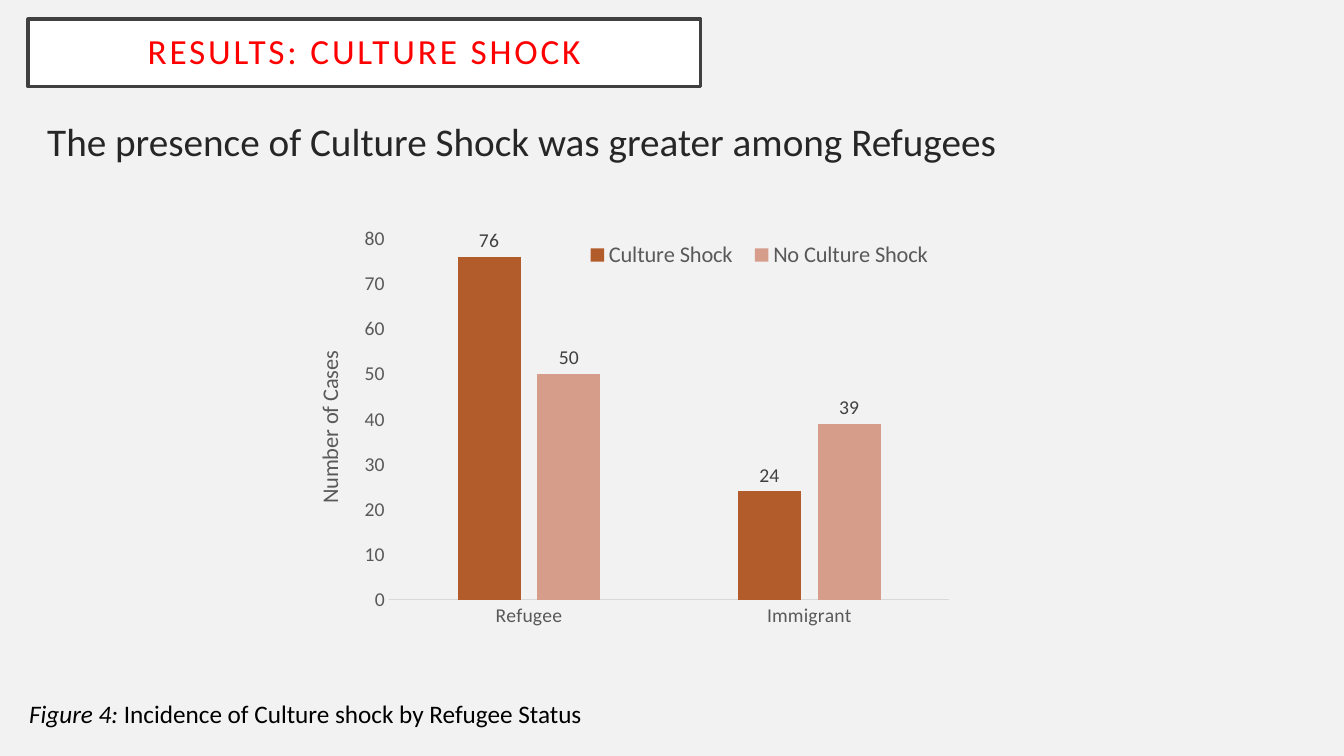
from dataclasses import dataclass

from lxml import etree
from pptx import Presentation
from pptx.chart.data import CategoryChartData
from pptx.dml.color import RGBColor
from pptx.enum.chart import XL_CHART_TYPE, XL_LABEL_POSITION, XL_LEGEND_POSITION, XL_TICK_MARK
from pptx.enum.shapes import MSO_SHAPE
from pptx.enum.text import MSO_ANCHOR, MSO_AUTO_SIZE, PP_ALIGN
from pptx.oxml.ns import qn
from pptx.util import Inches, Pt

COLUMN_CLUSTERED = XL_CHART_TYPE.COLUMN_CLUSTERED
OUTSIDE_END = XL_LABEL_POSITION.OUTSIDE_END
LEGEND_BOTTOM = XL_LEGEND_POSITION.BOTTOM
NO_TICK = XL_TICK_MARK.NONE
RECTANGLE = MSO_SHAPE.RECTANGLE
MIDDLE = MSO_ANCHOR.MIDDLE
GROW_TO_FIT = MSO_AUTO_SIZE.SHAPE_TO_FIT_TEXT
CENTER = PP_ALIGN.CENTER

FONT = "Calibri"
BACKGROUND = RGBColor(0xF2, 0xF2, 0xF2)
WHITE = RGBColor(0xFF, 0xFF, 0xFF)
BLACK = RGBColor(0x00, 0x00, 0x00)
RED = RGBColor(0xFF, 0x00, 0x00)
INK = RGBColor(0x26, 0x26, 0x26)
DARK_GRAY = RGBColor(0x40, 0x40, 0x40)
GRAY = RGBColor(0x59, 0x59, 0x59)
LIGHT_GRAY = RGBColor(0xD9, 0xD9, 0xD9)
RUST = RGBColor(0xB2, 0x5B, 0x2B)
ROSE = RGBColor(0xD7, 0x9D, 0x8B)


@dataclass(frozen=True)
class Box:
    left: float
    top: float
    width: float
    height: float

    def lengths(self) -> list:
        return [Inches(value) for value in (self.left, self.top, self.width, self.height)]


@dataclass(frozen=True)
class CaseSeries:
    name: str
    values: tuple[int, ...]
    color: RGBColor


CATEGORIES = ("Refugee", "Immigrant")
CASE_SERIES = (
    CaseSeries("Culture Shock", (76, 24), RUST),
    CaseSeries("No Culture Shock", (50, 39), ROSE),
)


def style_font(font, size: float, color: RGBColor) -> None:
    font.name = FONT
    font.size = Pt(size)
    font.color.rgb = color


def add_title(slide, box: Box, text: str) -> None:
    shape = slide.shapes.add_shape(RECTANGLE, *box.lengths())
    shape.shadow.inherit = False
    shape.fill.solid()
    shape.fill.fore_color.rgb = WHITE
    shape.line.color.rgb = DARK_GRAY
    shape.line.width = Pt(2.5)
    frame = shape.text_frame
    frame.word_wrap = True
    frame.vertical_anchor = MIDDLE
    frame.margin_left = frame.margin_right = Inches(0.2)
    frame.margin_top = frame.margin_bottom = Inches(0.2)
    paragraph = frame.paragraphs[0]
    paragraph.alignment = CENTER
    paragraph.line_spacing = 0.9
    style_font(paragraph.font, 25.2, RED)
    run = paragraph.add_run()
    run.text = text
    run._r.get_or_add_rPr().set("spc", "200")


def add_text(slide, box: Box, size: float, color: RGBColor, *texts: str):
    text_box = slide.shapes.add_textbox(*box.lengths())
    text_box.text_frame.word_wrap = True
    paragraph = text_box.text_frame.paragraphs[0]
    style_font(paragraph.font, size, color)
    for text in texts:
        paragraph.add_run().text = text
    return text_box


def set_layout(element, box: Box, inner: bool = False) -> None:
    """Place a chart part by fractions of the chart area."""
    for old_layout in element.findall(qn("c:layout")):
        element.remove(old_layout)
    layout = etree.Element(qn("c:layout"))
    manual = etree.SubElement(layout, qn("c:manualLayout"))
    settings = [("layoutTarget", "inner")] if inner else []
    settings += [("xMode", "edge"), ("yMode", "edge")]
    settings += [("x", box.left), ("y", box.top), ("w", box.width), ("h", box.height)]
    for tag, value in settings:
        etree.SubElement(manual, qn(f"c:{tag}")).set("val", str(value))
    legend_position = element.find(qn("c:legendPos"))
    if legend_position is None:
        element.insert(0, layout)
    else:
        legend_position.addnext(layout)


def add_case_chart(slide, box: Box) -> None:
    data = CategoryChartData()
    data.categories = CATEGORIES
    for case in CASE_SERIES:
        data.add_series(case.name, case.values)
    chart = slide.shapes.add_chart(COLUMN_CLUSTERED, *box.lengths(), data).chart
    chart.has_title = False
    style_font(chart.font, 10, BLACK)

    # Columns and their values
    plot = chart.plots[0]
    plot.vary_by_categories = False
    plot.gap_width = 219
    plot.overlap = -27
    for series, case in zip(plot.series, CASE_SERIES):
        series.format.fill.solid()
        series.format.fill.fore_color.rgb = case.color
        labels = series.data_labels
        labels.show_value = True
        labels.position = OUTSIDE_END
        style_font(labels.font, 14, DARK_GRAY)

    # Axes
    for axis in (chart.category_axis, chart.value_axis):
        axis.has_major_gridlines = False
        axis.major_tick_mark = axis.minor_tick_mark = NO_TICK
        style_font(axis.tick_labels.font, 14, GRAY)
    chart.category_axis.format.line.color.rgb = LIGHT_GRAY
    chart.category_axis.format.line.width = Pt(0.75)
    value_axis = chart.value_axis
    value_axis.minimum_scale, value_axis.maximum_scale = 0, 80
    value_axis.major_unit = 10
    value_axis.format.line.fill.background()
    paragraph = value_axis.axis_title.text_frame.paragraphs[0]
    run = paragraph.add_run()
    run.text = "Number of Cases"
    style_font(run.font, 16, GRAY)
    run.font.bold = False

    # Legend inside the plot
    chart.has_legend = True
    legend = chart.legend
    legend.position = LEGEND_BOTTOM
    legend.include_in_layout = False
    style_font(legend.font, 16, GRAY)
    set_layout(legend._element, Box(0.42, 0.05, 0.55, 0.07))
    plot_area = chart._chartSpace.find(f".//{qn('c:plotArea')}")
    set_layout(plot_area, Box(0.14, 0.05, 0.84, 0.78), inner=True)


def main() -> None:
    presentation = Presentation()
    presentation.slide_width = Inches(13.33)
    presentation.slide_height = Inches(7.5)
    slide = presentation.slides.add_slide(presentation.slide_layouts[6])
    slide.background.fill.solid()
    slide.background.fill.fore_color.rgb = BACKGROUND

    # Title and finding
    add_title(slide, Box(0.28, 0.19, 6.67, 0.67), "RESULTS: CULTURE SHOCK")
    finding = add_text(slide, Box(0.37, 1.11, 12.64, 5.61), 28, INK,
                       "The presence of Culture Shock was greater among Refugees")
    finding.text_frame.paragraphs[0].space_before = Pt(10)

    # Chart and caption
    add_case_chart(slide, Box(2.93, 2.14, 6.62, 4.59))
    caption = add_text(slide, Box(0.19, 6.88, 12.1, 0.4), 18, BLACK,
                       "Figure 4: ", "Incidence of Culture shock by Refugee Status")
    caption.text_frame.auto_size = GROW_TO_FIT
    caption.text_frame.paragraphs[0].runs[0].font.italic = True

    presentation.save("out.pptx")


if __name__ == "__main__":
    main()
